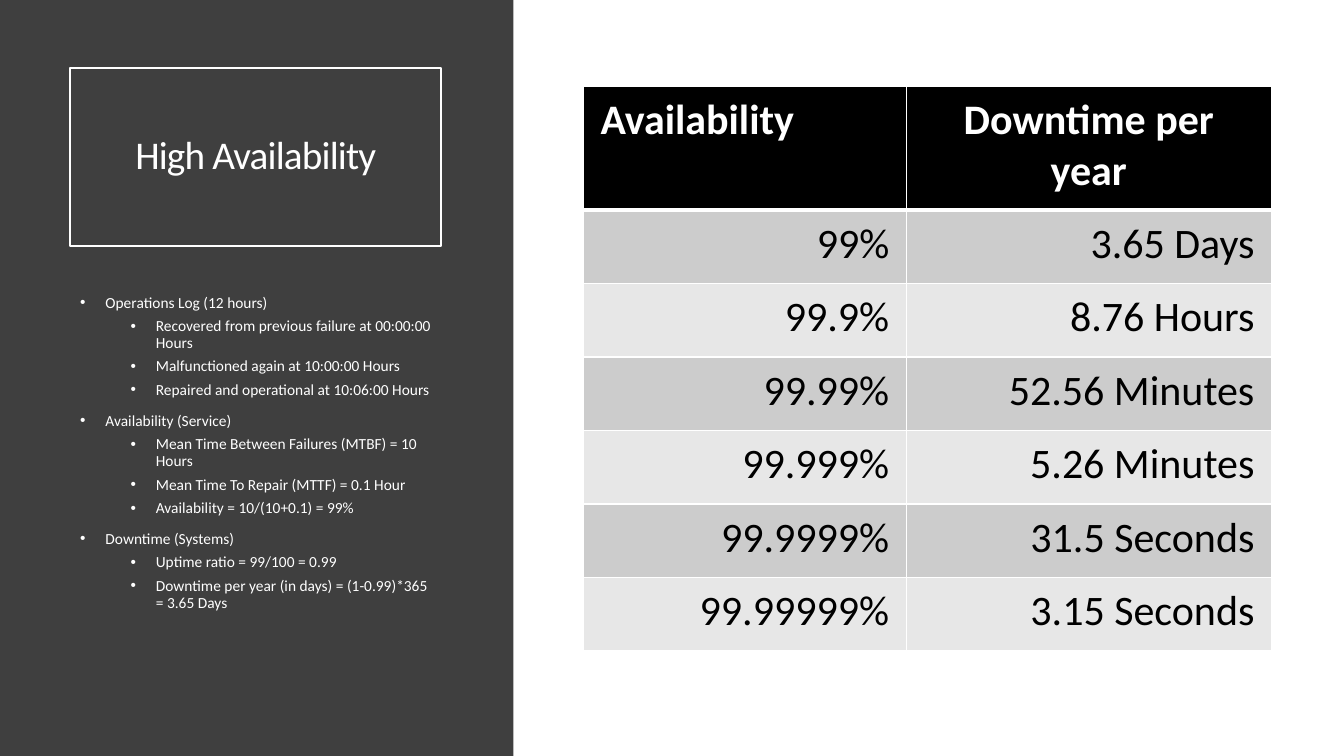
from dataclasses import dataclass
from typing import Any

from lxml.etree import SubElement
from pptx import Presentation
from pptx.dml.color import RGBColor as Rgb
from pptx.enum.shapes import MSO_SHAPE as Shape
from pptx.enum.text import MSO_ANCHOR as Anchor, PP_ALIGN as Align
from pptx.oxml.ns import qn
from pptx.util import Emu, Pt

SCALE = 9525  # EMU in one px


@dataclass(frozen=True)
class Theme:
    font: str = "Calibri"
    panel: str = "3F3F3F"
    light: str = "FFFFFF"
    dark: str = "000000"
    bands: tuple[str, str] = ("CCCCCC", "E7E7E7")
    title: int = 28
    body: int = 11
    table: int = 30


@dataclass(frozen=True)
class Box:
    left: int
    top: int
    width: int
    height: int

    def emu(self) -> tuple[Emu, ...]:
        return tuple(px(n) for n in (self.left, self.top, self.width, self.height))


@dataclass(frozen=True)
class Topic:
    head: str
    points: tuple[str, ...]


@dataclass(frozen=True)
class Level:
    indent: int
    before: int


THEME = Theme()
PANEL = Box(0, 0, 489, 720)
TITLE = Box(67, 65, 353, 169)
BODY = Box(67, 276, 353, 359)
GRID = Box(556, 82, 655, 538)
COLS = (307, 348)
HEAD_ROW, ROW = 118, 70
HANG = 24
LEVELS = (Level(24, 10), Level(72, 5))

TOPICS = (
    Topic("Operations Log (12 hours)", (
        "Recovered from previous failure at 00:00:00 Hours",
        "Malfunctioned again at 10:00:00 Hours",
        "Repaired and operational at 10:06:00 Hours",
    )),
    Topic("Availability (Service)", (
        "Mean Time Between Failures (MTBF) = 10 Hours",
        "Mean Time To Repair (MTTF) = 0.1 Hour",
        "Availability = 10/(10+0.1) = 99%",
    )),
    Topic("Downtime (Systems)", (
        "Uptime ratio = 99/100 = 0.99",
        "Downtime per year (in days) = (1-0.99)*365 = 3.65 Days",
    )),
)
ROWS = (
    ("Availability", "Downtime per year"),
    ("99%", "3.65 Days"),
    ("99.9%", "8.76 Hours"),
    ("99.99%", "52.56 Minutes"),
    ("99.999%", "5.26 Minutes"),
    ("99.9999%", "31.5 Seconds"),
    ("99.99999%", "3.15 Seconds"),
)


def px(count: int) -> Emu:
    return Emu(count * SCALE)


def color(code: str) -> Rgb:
    return Rgb.from_string(code)


def write(para: Any, text: str, *, size: int, ink: str = THEME.light,
          bold: bool = False, align: Any = Align.LEFT,
          lead: float = 1.0, before: int = 0, track: int = 0) -> None:
    """Fill a paragraph with one run; track is in hundredths of a point."""
    para.alignment = align
    para.line_spacing = lead
    para.space_before = Pt(before)
    run = para.add_run()
    run.text = text
    font = run.font
    font.name, font.size, font.bold = THEME.font, Pt(size), bold
    font.color.rgb = color(ink)
    if track:
        font._element.set("spc", str(track))


def bullet(para: Any, level: int) -> None:
    para.level = level
    props = para._p.get_or_add_pPr()
    props.set("marL", str(px(LEVELS[level].indent)))
    props.set("indent", str(px(-HANG)))
    SubElement(props, qn("a:buFont"), typeface="Arial")
    SubElement(props, qn("a:buChar"), char="•")


def border(cell: Any, base: int) -> None:
    """Rule all four sides in the light colour, the bottom in its own width."""
    props = cell._tc.get_or_add_tcPr()
    for side, width in (("L", 1), ("R", 1), ("T", 1), ("B", base)):
        line = SubElement(props, qn(f"a:ln{side}"), w=str(Pt(width)))
        fill = SubElement(line, qn("a:solidFill"))
        SubElement(fill, qn("a:srgbClr"), val=THEME.light)


def draw_panel(slide: Any) -> None:
    panel = slide.shapes.add_shape(Shape.RECTANGLE, *PANEL.emu())
    panel.shadow.inherit = False
    panel.fill.solid()
    panel.fill.fore_color.rgb = color(THEME.panel)
    panel.line.fill.background()


def draw_title(slide: Any) -> None:
    title = slide.shapes.add_shape(Shape.RECTANGLE, *TITLE.emu())
    title.shadow.inherit = False
    title.fill.background()
    title.line.color.rgb = color(THEME.light)
    title.line.width = Pt(1.5)
    frame = title.text_frame
    frame.word_wrap = True
    frame.vertical_anchor = Anchor.MIDDLE
    write(frame.paragraphs[0], "High Availability", size=THEME.title,
          align=Align.CENTER, lead=0.9, track=-60)


def draw_body(slide: Any) -> None:
    frame = slide.shapes.add_textbox(*BODY.emu()).text_frame
    frame.word_wrap = True
    lines = [(level, text) for topic in TOPICS
             for level, text in ((0, topic.head), *((1, p) for p in topic.points))]
    for i, (level, text) in enumerate(lines):
        para = frame.add_paragraph() if i else frame.paragraphs[0]
        write(para, text, size=THEME.body, lead=0.9, before=LEVELS[level].before)
        bullet(para, level)


def draw_table(slide: Any) -> None:
    table = slide.shapes.add_table(len(ROWS), len(COLS), *GRID.emu()).table
    table.horz_banding = False
    for col, width in zip(table.columns, COLS):
        col.width = px(width)
    for r, texts in enumerate(ROWS):
        head = r == 0
        table.rows[r].height = px(HEAD_ROW if head else ROW)
        for c, text in enumerate(texts):
            cell = table.cell(r, c)
            cell.margin_left = cell.margin_right = px(16)
            cell.margin_top = cell.margin_bottom = px(8)
            border(cell, 3 if head else 1)
            cell.fill.solid()
            cell.fill.fore_color.rgb = color(
                THEME.dark if head else THEME.bands[(r - 1) % 2])
            align = (Align.LEFT, Align.CENTER)[c] if head else Align.RIGHT
            write(cell.text_frame.paragraphs[0], text, size=THEME.table,
                  ink=THEME.light if head else THEME.dark, bold=head, align=align)


def main() -> None:
    deck = Presentation()
    deck.slide_width, deck.slide_height = px(1280), px(720)
    slide = deck.slides.add_slide(deck.slide_layouts[6])
    for draw in (draw_panel, draw_title, draw_body, draw_table):
        draw(slide)
    deck.save("out.pptx")


if __name__ == "__main__":
    main()
